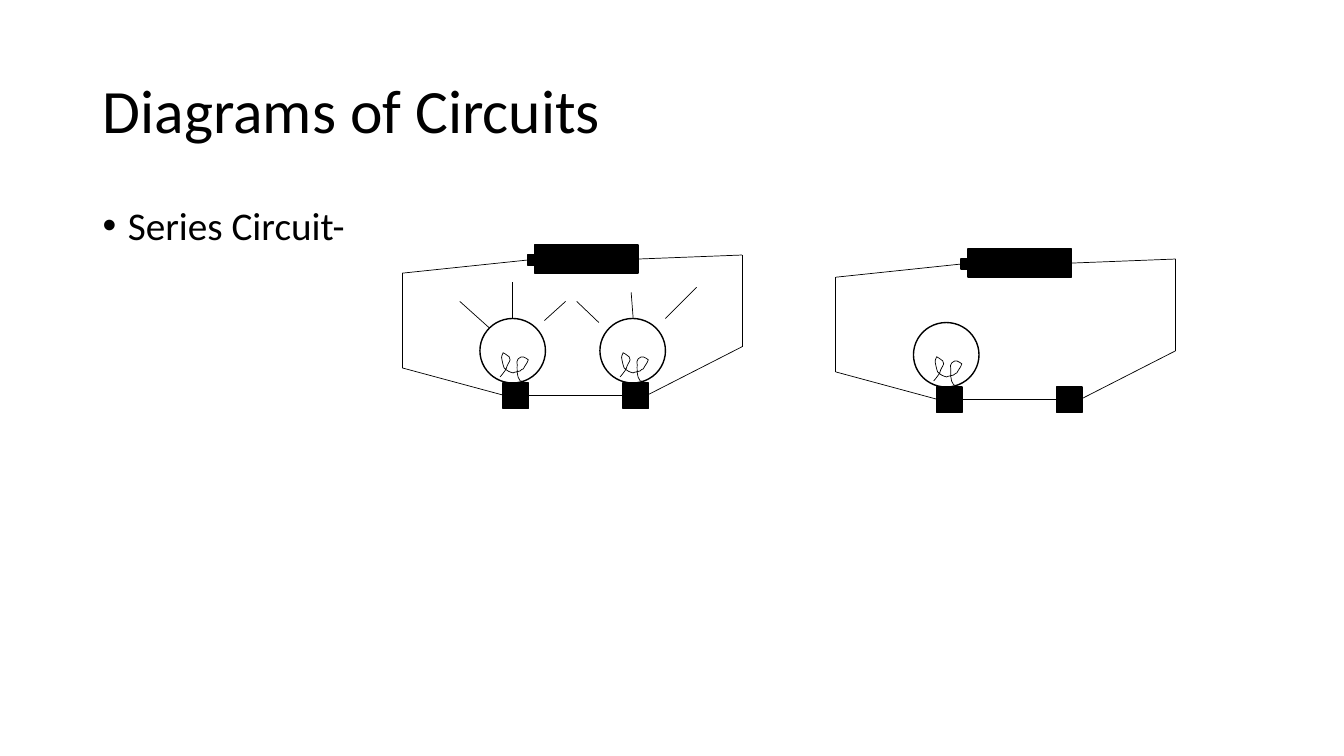
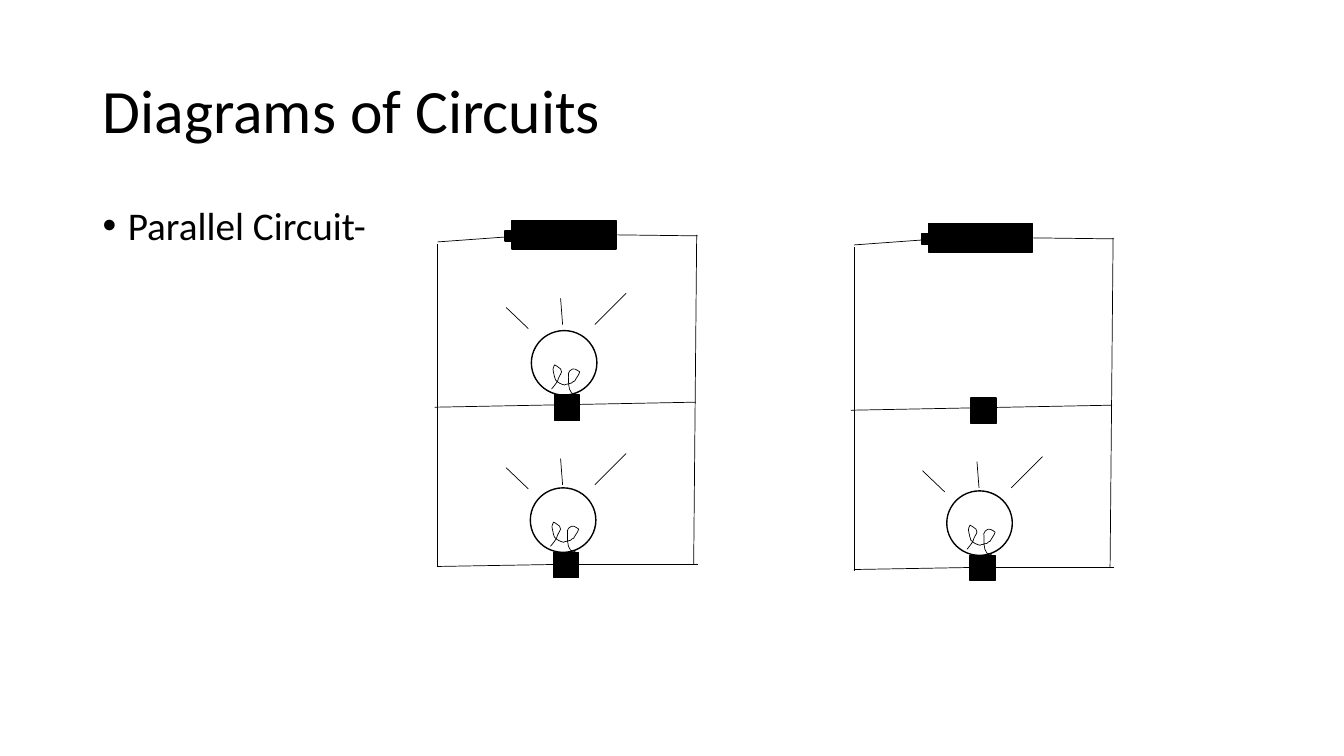
from collections import namedtuple

from lxml.etree import SubElement
from pptx import Presentation
from pptx.dml.color import RGBColor
from pptx.enum.dml import MSO_PATTERN
from pptx.enum.shapes import MSO_CONNECTOR, MSO_SHAPE
from pptx.enum.text import MSO_ANCHOR
from pptx.oxml.ns import qn
from pptx.util import Inches, Pt

SLIDE_WIDTH, SLIDE_HEIGHT = 13.33, 7.5
INK, STRIPE = "000000", "D0CECE"
TEXT_LEFT, TEXT_WIDTH = 0.92, 11.5
BATTERY_SIZE, TIP_SIZE, TIP_OFFSET = (1.03, 0.28), (0.17, 0.1), (-0.07, 0.1)
GLASS_SIZE, SOCKET_SIZE = (0.65, 0.64), (0.25, 0.25)
SOCKET_OFFSET, FILAMENT_OFFSET = (0.23, 0.64), (0.2, 0.34)
LIT, DARK, MISSING = "lit", "dark", "missing"

FILAMENT_START = (0, 0.24)
FILAMENT_CURVES = [
    (1, 23, 5, 18, 6, 16), (6, 15, 6, 14, 7, 13), (11, 5, 7, 14, 10, 7),
    (9, 6, 9, 5, 9, 4), (7, 2, 3, 0, 3, 0), (1, 5, 1, 3, 3, 12),
    (3, 13, 3, 14, 4, 15), (7, 18, 9, 19, 13, 20), (14, 19, 18, 19, 20, 18),
    (21, 17, 22, 16, 23, 16), (27, 9, 26, 12, 28, 7), (25, 5, 22, 2, 18, 6),
    (16, 7, 17, 10, 17, 12), (17, 14, 16, 24, 20, 28),
    (20, 28, 22, 28, 23, 29), (23, 29, 24, 29, 25, 30),
]

WIDE_RAYS = [
    [(0.65, 0), (0.96, -0.31)],
    [(0.33, 0), (0.31, -0.26)],
    [(-0.01, 0.04), (-0.23, -0.17)],
]
TALL_RAYS = [
    [(0.64, 0.02), (0.85, -0.17)],
    [(0.32, 0), (0.32, -0.36)],
    [(0.09, 0.09), (-0.2, -0.17)],
]

Bulb = namedtuple("Bulb", "place rays rays_offset")
Circuit = namedtuple("Circuit", "battery wires bulbs")

SERIES = Circuit(
    battery=(1.31, 0.01),
    wires=[
        [(2.34, 0.15), (3.37, 0.11), (3.37, 1.02), (2.43, 1.5)],
        [(2.19, 1.5), (1.24, 1.5)],
        [(1, 1.5), (0, 1.23), (0, 0.29), (1.24, 0.16)],
    ],
    bulbs=[
        Bulb((0.77, 0.74), TALL_RAYS, (0, 0)),
        Bulb((1.96, 0.74), WIDE_RAYS, (0, 0)),
    ],
)
PARALLEL = Circuit(
    battery=(0.77, 0),
    wires=[
        [(0, 1.85), (2.59, 1.8)],
        [(1.8, 0.14), (2.61, 0.15)],
        [(2.6, 0.14), (2.57, 3.41)],
        [(2.61, 3.41), (1.42, 3.41)],
        [(1.18, 3.41), (0.03, 3.43)],
        [(0.03, 3.44), (0.03, 0.23)],
        [(0.03, 0.21), (0.86, 0.15)],
    ],
    bulbs=[
        Bulb((0.96, 1.09), WIDE_RAYS, (-0.02, -0.06)),
        Bulb((0.95, 2.65), WIDE_RAYS, (-0.01, -0.03)),
    ],
)
SLIDES = [
    ("Series Circuit-", SERIES,
     [((3.99, 2.42), (LIT, LIT)), ((8.29, 2.46), (DARK, MISSING))]),
    ("Parallel Circuit-", PARALLEL,
     [((4.31, 2.19), (LIT, LIT)), ((8.44, 2.22), (MISSING, LIT))]),
]


def color(value):
    return RGBColor.from_string(value)


def shift(origin, offset):
    return origin[0] + offset[0], origin[1] + offset[1]


def set_line(shape, width):
    shape.line.color.rgb = color(INK)
    shape.line.width = Pt(width)


def add_text(slide, text, top, height, size, anchor, bullet=False):
    box = slide.shapes.add_textbox(
        *map(Inches, (TEXT_LEFT, top, TEXT_WIDTH, height)))
    frame = box.text_frame
    for name, value in {"word_wrap": True, "vertical_anchor": anchor}.items():
        setattr(frame, name, value)
    para = frame.paragraphs[0]
    if bullet:
        properties = para._p.get_or_add_pPr()
        for name, value in {"marL": 0.25, "indent": -0.25}.items():
            properties.set(name, str(Inches(value)))
        SubElement(properties, qn("a:buFont"), typeface="Arial")
        SubElement(properties, qn("a:buChar"), char="•")
    para.line_spacing = 0.9
    span = para.add_run()
    span.text = text
    for name, value in {"name": "Calibri", "size": Pt(size)}.items():
        setattr(span.font, name, value)
    span.font.color.rgb = color(INK)


def add_part(slide, kind, place, size):
    part = slide.shapes.add_shape(kind, *map(Inches, (*place, *size)))
    part.shadow.inherit = False
    set_line(part, 1)
    return part


def add_polyline(slide, origin, points):
    for start, end in zip(points, points[1:]):
        ends = (*shift(origin, start), *shift(origin, end))
        wire = slide.shapes.add_connector(
            MSO_CONNECTOR.STRAIGHT, *map(Inches, ends))
        set_line(wire, 0.5)
        SubElement(wire._element.spPr, qn("a:effectLst"))


def add_battery(slide, place):
    for offset, size in (((0, 0), BATTERY_SIZE), (TIP_OFFSET, TIP_SIZE)):
        part = add_part(slide, MSO_SHAPE.RECTANGLE, shift(place, offset), size)
        part.fill.solid()
        part.fill.fore_color.rgb = color(INK)


def bend_segments(freeform):
    segments = list(freeform._element.iter(qn("a:lnTo")))
    outline = segments[0].getparent()
    for first in range(0, len(segments), 3):
        curve = SubElement(outline, qn("a:cubicBezTo"))
        for segment in segments[first:first + 3]:
            curve.append(segment[0])
            outline.remove(segment)


def add_filament(slide, place):
    controls = [
        shift(place, (curve[index] / 100, curve[index + 1] / 100))
        for curve in FILAMENT_CURVES for index in (0, 2, 4)]
    builder = slide.shapes.build_freeform(
        *map(Inches, shift(place, FILAMENT_START)))
    builder.add_line_segments(
        [tuple(map(Inches, point)) for point in controls], close=False)
    filament = builder.convert_to_shape()
    bend_segments(filament)
    filament.shadow.inherit = False
    filament.fill.background()
    set_line(filament, 0.5)


def add_bulb(slide, place, bulb, state):
    if state != MISSING:
        glass = add_part(slide, MSO_SHAPE.OVAL, place, GLASS_SIZE)
        glass.fill.background()
    socket = add_part(
        slide, MSO_SHAPE.RECTANGLE, shift(place, SOCKET_OFFSET), SOCKET_SIZE)
    socket.fill.patterned()
    socket.fill.pattern = MSO_PATTERN.DARK_HORIZONTAL
    socket.fill.fore_color.rgb = color(INK)
    socket.fill.back_color.rgb = color(STRIPE)
    if state != MISSING:
        add_filament(slide, shift(place, FILAMENT_OFFSET))
    if state == LIT:
        for ray in bulb.rays:
            add_polyline(slide, shift(place, bulb.rays_offset), ray)


def add_circuit(slide, origin, circuit, states):
    for wire in circuit.wires:
        add_polyline(slide, origin, wire)
    add_battery(slide, shift(origin, circuit.battery))
    for bulb, state in zip(circuit.bulbs, states):
        add_bulb(slide, shift(origin, bulb.place), bulb, state)


def add_circuit_slide(deck, label, circuit, examples):
    slide = deck.slides.add_slide(deck.slide_layouts[6])
    add_text(slide, "Diagrams of Circuits", 0.4, 1.45, 44, MSO_ANCHOR.MIDDLE)
    add_text(slide, label, 2, 4.76, 28, MSO_ANCHOR.TOP, bullet=True)
    for origin, states in examples:
        add_circuit(slide, origin, circuit, states)


def main():
    deck = Presentation()
    for name, value in {"slide_width": SLIDE_WIDTH,
                        "slide_height": SLIDE_HEIGHT}.items():
        setattr(deck, name, Inches(value))
    for content in SLIDES:
        add_circuit_slide(deck, *content)
    deck.save("out.pptx")


if __name__ == "__main__":
    main()
